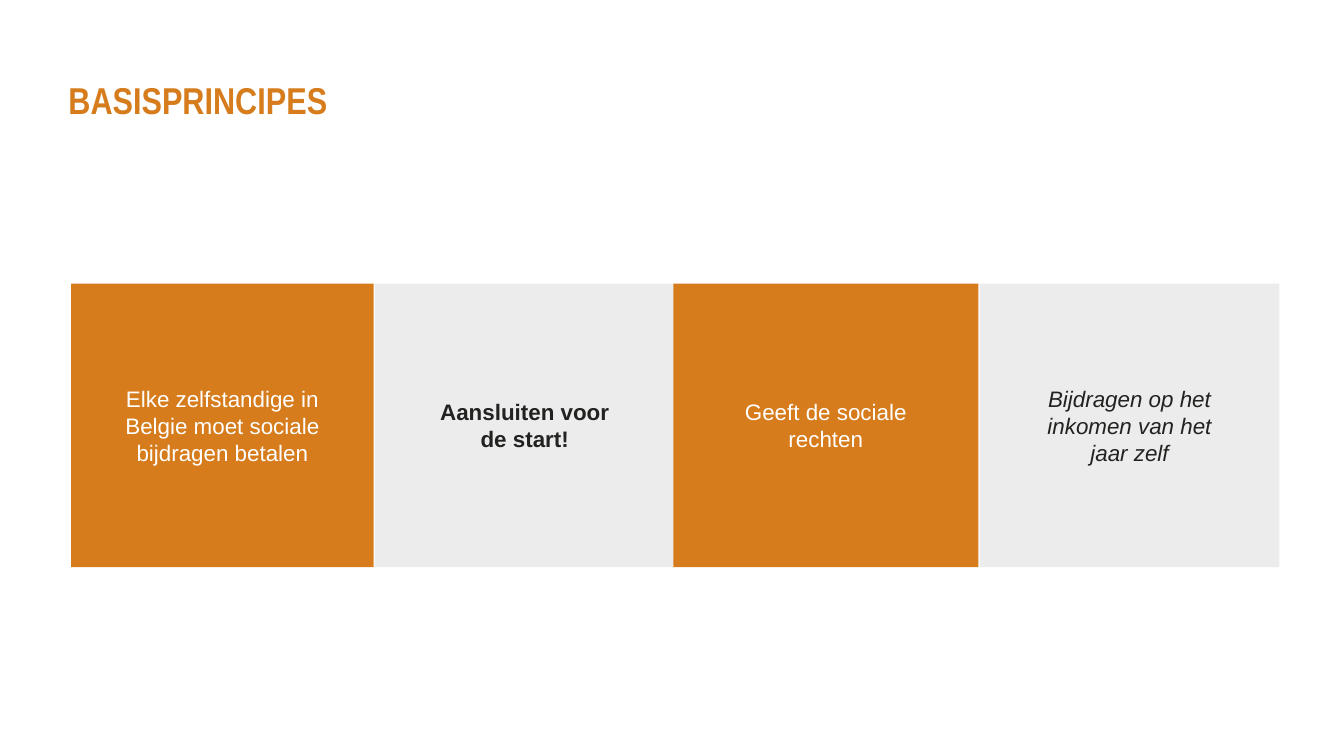
from pptx import Presentation
from pptx.dml.color import RGBColor
from pptx.enum.shapes import MSO_SHAPE
from pptx.enum.text import MSO_ANCHOR, PP_ALIGN
from pptx.util import Inches, Pt

COLORS = {"orange": "D67C1C", "grey": "ECECEC", "dark": "222220", "white": "FFFFFF"}

# left, width, text, fill, text colour, extra font format
TILES = [
    (0, 2.25, "Elke zelfstandige in Belgie moet sociale bijdragen betalen", "orange", "white", {}),
    (2.26, 2.23, "Aansluiten voor de start!", "grey", "dark", {"bold": True}),
    (4.48, 2.27, "Geeft de sociale rechten", "orange", "white", {}),
    (6.76, 2.23, "Bijdragen op het inkomen van het jaar zelf", "grey", "dark", {"italic": True}),
]


def color(name):
    return RGBColor.from_string(COLORS[name])


def set_text(shape, text, text_color, font, anchor, margin=0, paragraph_format=None):
    frame = shape.text_frame
    frame.word_wrap = True
    frame.vertical_anchor = anchor
    for side in ("left", "top", "right", "bottom"):
        setattr(frame, f"margin_{side}", Inches(margin))
    paragraph = frame.paragraphs[0]
    for name, value in (paragraph_format or {}).items():
        setattr(paragraph, name, value)
    run = paragraph.add_run()
    run.text = text
    for name, value in font.items():
        setattr(run.font, name, value)
    run.font.color.rgb = color(text_color)


def add_title(slide, left, top, width, height):
    title = slide.shapes.add_textbox(Inches(left), Inches(top), Inches(width), Inches(height))
    font = {"name": "Arial Narrow", "size": Pt(20), "bold": True}
    set_text(title, "BASISPRINCIPES", "orange", font, MSO_ANCHOR.BOTTOM)


def add_tiles(slide, left, top, height):
    """Place the tiles side by side, each offset from the left of the row."""
    paragraph_format = {"alignment": PP_ALIGN.CENTER, "space_after": Pt(6)}
    for offset, width, text, fill, text_color, extra in TILES:
        tile = slide.shapes.add_shape(
            MSO_SHAPE.RECTANGLE,
            Inches(left + offset), Inches(top), Inches(width), Inches(height))
        tile.shadow.inherit = False
        tile.fill.solid()
        tile.fill.fore_color.rgb = color(fill)
        tile.line.fill.background()
        font = {"name": "Arial", "size": Pt(12), **extra}
        set_text(tile, text, text_color, font, MSO_ANCHOR.MIDDLE, 0.39, paragraph_format)


def main():
    presentation = Presentation()
    presentation.slide_width = Inches(10)
    presentation.slide_height = Inches(10 * 9 / 16)
    slide = presentation.slides.add_slide(presentation.slide_layouts[6])
    add_title(slide, 0.51, 0.3, 4.43, 0.61)
    add_tiles(slide, 0.53, 2.11, 2.11)
    presentation.save("out.pptx")


if __name__ == "__main__":
    main()
